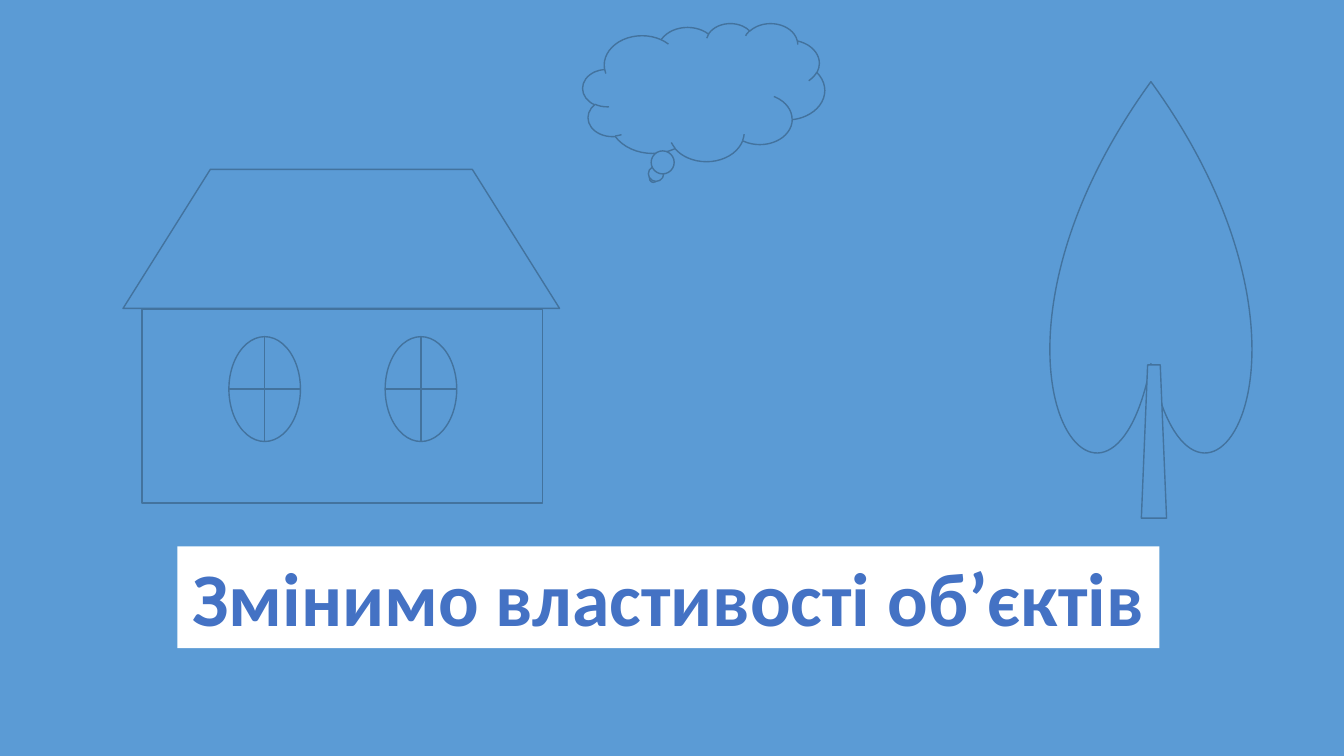
import pptx
import pptx.dml.color
import pptx.enum.shapes
import pptx.enum.text
import pptx.oxml
import pptx.util

Inches = pptx.util.Inches
SHAPE = pptx.enum.shapes.MSO_SHAPE
NS = "http://schemas.openxmlformats.org/drawingml/2006/main"
BLUE, EDGE, WHITE, TITLE_BLUE = "5B9BD5", "43739E", "FFFFFF", "4472C4"


def color(value):
    return pptx.dml.color.RGBColor.from_string(value)


def add_part(s, kind, left, top, width, height, fill=BLUE, line=EDGE, rotation=0):
    sp = s.shapes.add_shape(kind, Inches(left), Inches(top), Inches(width), Inches(height))
    sp.shadow.inherit = False
    sp.rotation = rotation
    sp.fill.solid()
    sp.fill.fore_color.rgb = color(fill)
    if line:
        sp.line.color.rgb = color(line)
        sp.line.width = pptx.util.Pt(1)
    else:
        sp.line.fill.background()
    return sp


def add_house(s, left, top, width, height):
    roof_height = 1.38
    eave = 0.19
    # Walls, then the roof with its wide side down
    add_part(s, SHAPE.RECTANGLE, left + eave, top + roof_height + 0.01,
             width - 2 * eave + 0.02, height - roof_height - 0.01)
    add_part(s, SHAPE.FLOWCHART_MANUAL_OPERATION, left, top, width, roof_height, rotation=180)
    # Two round windows
    for i in range(2):
        add_part(s, SHAPE.FLOWCHART_OR, left + 1.05 + i * 1.55, top + 1.66, 0.71, 1.04)


def add_tree(s, left, top, width, height):
    trunk_width, trunk_height = 0.25, 1.52
    # Crown, then trunk
    add_part(s, SHAPE.HEART, left, top, width, 3.73, rotation=180)
    add_part(s, SHAPE.TRAPEZOID, left + (width - trunk_width) / 2 + 0.03,
             top + height - trunk_height, trunk_width, trunk_height)


def add_title(s, left, top, width, height, text):
    sp = add_part(s, SHAPE.RECTANGLE, left, top, width, height, fill=WHITE, line=None)
    tf = sp.text_frame
    tf.word_wrap = False
    tf.auto_size = pptx.enum.text.MSO_AUTO_SIZE.SHAPE_TO_FIT_TEXT
    tf.vertical_anchor = pptx.enum.text.MSO_ANCHOR.TOP
    p = tf.paragraphs[0]
    p.alignment = pptx.enum.text.PP_ALIGN.CENTER
    p.font.name = "Calibri"
    p.font.size = pptx.util.Pt(54)
    p.font.bold = True
    p.font.color.rgb = color(TITLE_BLUE)
    r = p.add_run()
    r.text = text
    # Thin white outline around the letters
    r._r.get_or_add_rPr().insert(0, pptx.oxml.parse_xml(
        f'<a:ln xmlns:a="{NS}" w="9525"><a:solidFill>'
        f'<a:srgbClr val="{WHITE}"/></a:solidFill></a:ln>'))


def main():
    prs = pptx.Presentation()
    prs.slide_width, prs.slide_height = Inches(13.33), Inches(7.5)
    s = prs.slides.add_slide(prs.slide_layouts[6])
    s.background.fill.solid()
    s.background.fill.fore_color.rgb = color(BLUE)

    add_house(s, 1.22, 1.68, 4.33, 3.31)
    add_part(s, SHAPE.CLOUD_CALLOUT, 5.78, 0.23, 2.4, 1.37)
    add_tree(s, 10.42, 0.81, 1.99, 4.33)
    add_title(s, 1.76, 5.42, 9.74, 1.01, "Змінимо властивості об’єктів")
    prs.save("out.pptx")


if __name__ == "__main__":
    main()
